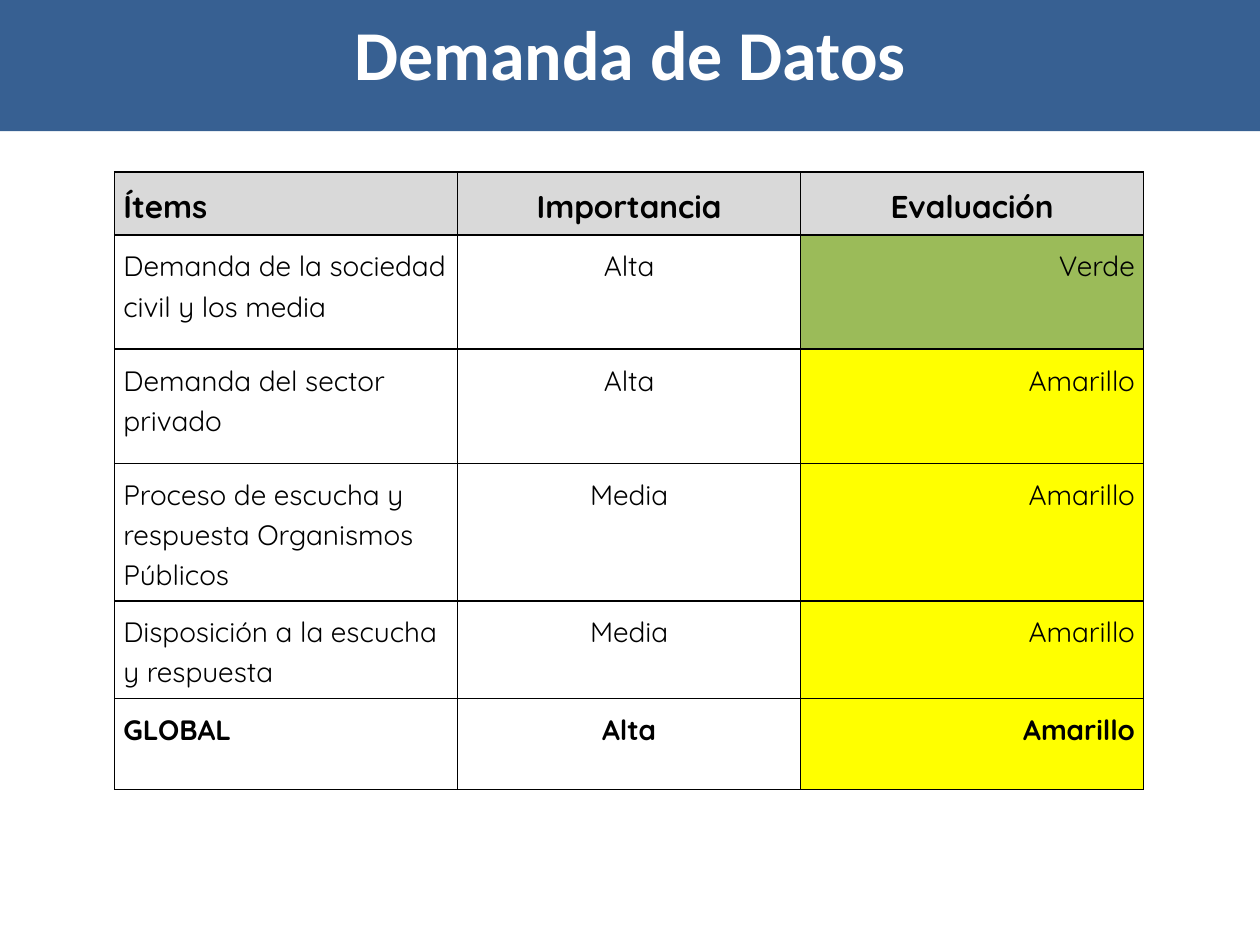
from dataclasses import dataclass

from lxml import etree
from pptx import Presentation
from pptx.dml.color import RGBColor
from pptx.enum import shapes, text
from pptx.oxml import ns
from pptx.util import Pt


@dataclass(frozen=True)
class Theme:
    banner: str = "376092"
    header: str = "D9D9D9"
    green: str = "9BBB59"
    yellow: str = "FFFF00"
    ink: str = "000000"
    white: str = "FFFFFF"
    title_font: str = "Calibri"
    table_font: str = "Quicksand"
    title_size: int = 40
    header_size: int = 18
    body_size: int = 16


def add_span(para, words, font, size, color, bold):
    span = para.add_run()
    span.text = words
    span.font.name = font
    span.font.size = Pt(size)
    span.font.bold = bold
    span.font.color.rgb = RGBColor.from_string(color)


def add_borders(cell, color):
    properties = cell._tc.get_or_add_tcPr()
    for index, side in enumerate(("lnL", "lnR", "lnT", "lnB")):
        line = etree.Element(ns.qn(f"a:{side}"), w=str(Pt(1)))
        fill = etree.SubElement(line, ns.qn("a:solidFill"))
        etree.SubElement(fill, ns.qn("a:srgbClr"), val=color)
        properties.insert(index, line)


theme = Theme()
deck = Presentation()
deck.slide_width, deck.slide_height = Pt(720), Pt(540)
page = deck.slides.add_slide(deck.slide_layouts[6])

rows = [
    ("Ítems", "Importancia", "Evaluación"),
    ("Demanda de la sociedad civil y los media", "Alta", "Verde"),
    ("Demanda del sector privado", "Alta", "Amarillo"),
    ("Proceso de escucha y respuesta Organismos Públicos", "Media", "Amarillo"),
    ("Disposición a la escucha y respuesta", "Media", "Amarillo"),
    ("GLOBAL", "Alta", "Amarillo"),
]
row_heights = [31.7, 65.2, 65.2, 52, 52, 52]
column_width = 196
rating_colors = {"Verde": theme.green, "Amarillo": theme.yellow}
alignments = [text.PP_ALIGN.LEFT, text.PP_ALIGN.CENTER, text.PP_ALIGN.RIGHT]

frame = page.shapes.add_table(
    len(rows), 3, Pt(65.5), Pt(98.4), Pt(3 * column_width), Pt(sum(row_heights))
)
table = frame.table
table.horz_banding = False
for column in table.columns:
    column.width = Pt(column_width)

for row_index, (labels, height) in enumerate(zip(rows, row_heights)):
    table.rows[row_index].height = Pt(height)
    is_header = row_index == 0
    is_total = row_index == len(rows) - 1
    for column_index, label in enumerate(labels):
        cell = table.cell(row_index, column_index)
        cell.margin_left = cell.margin_right = Pt(5)
        cell.margin_top = cell.margin_bottom = Pt(5)
        color = theme.header if is_header else rating_colors.get(label)
        if color:
            cell.fill.solid()
            cell.fill.fore_color.rgb = RGBColor.from_string(color)
        else:
            cell.fill.background()
        add_borders(cell, theme.ink)

        para = cell.text_frame.paragraphs[0]
        para.alignment = alignments[min(column_index, 1) if is_header else column_index]
        para.line_spacing = 1.15
        para.space_after = Pt(10)
        size = theme.header_size if is_header else theme.body_size
        add_span(para, label, theme.table_font, size, theme.ink, is_header or is_total)

banner = page.shapes.add_shape(shapes.MSO_SHAPE.RECTANGLE, 0, 0, Pt(720), Pt(75))
banner.shadow.inherit = False
banner.fill.solid()
banner.fill.fore_color.rgb = RGBColor.from_string(theme.banner)
banner.line.fill.background()
banner.text_frame.word_wrap = True
banner.text_frame.vertical_anchor = text.MSO_ANCHOR.TOP
banner.text_frame.margin_top = Pt(6)
title = banner.text_frame.paragraphs[0]
title.alignment = text.PP_ALIGN.CENTER
add_span(title, "Demanda de Datos", theme.title_font, theme.title_size, theme.white, True)

deck.save("out.pptx")
